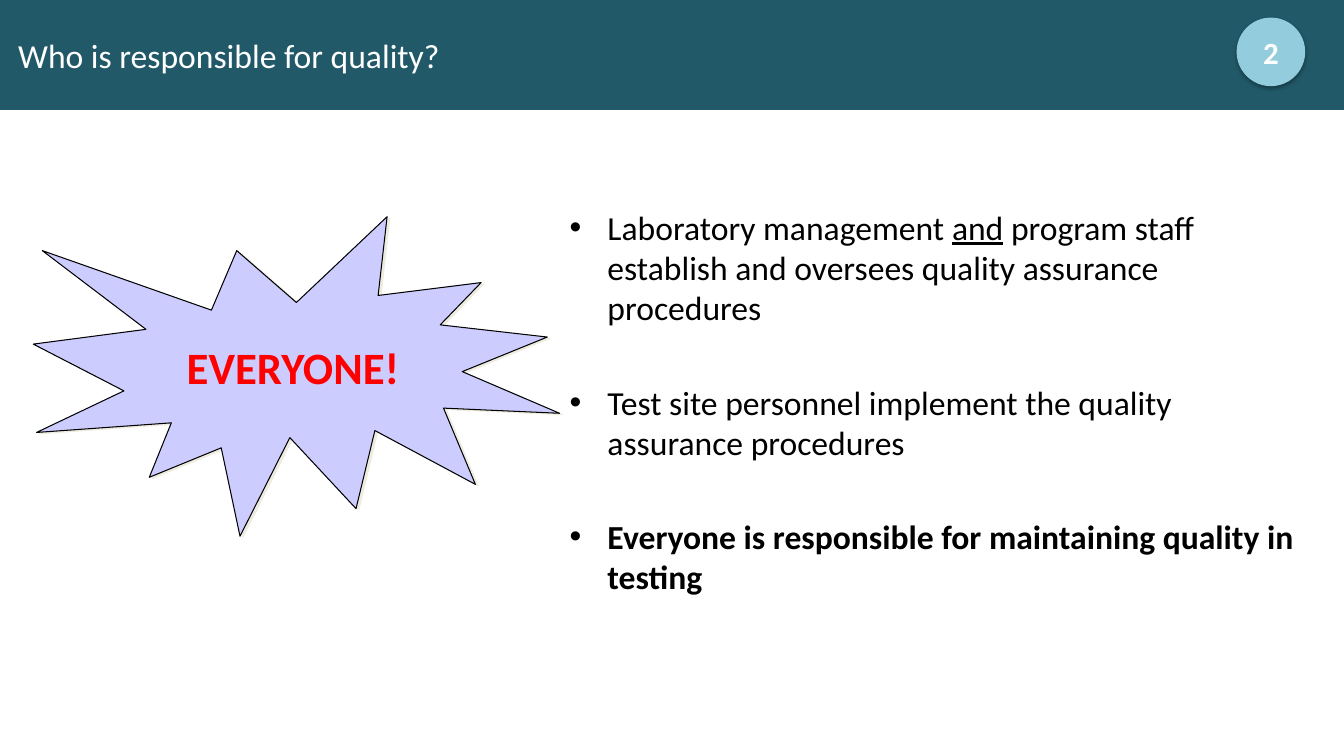
from dataclasses import dataclass

from lxml.etree import SubElement
from pptx import Presentation
from pptx.dml.color import RGBColor
from pptx.enum.shapes import MSO_SHAPE
from pptx.enum.text import MSO_ANCHOR, MSO_AUTO_SIZE, PP_ALIGN
from pptx.oxml.ns import qn
from pptx.slide import Slide
from pptx.text.text import TextFrame, _Run
from pptx.util import Inches, Pt


@dataclass(frozen=True)
class Theme:
    font: str = "Calibri"
    teal: str = "215968"
    sky: str = "93CDDD"
    lilac: str = "CCCCFF"
    cream: str = "EEECE1"
    red: str = "FF0000"
    black: str = "000000"
    white: str = "FFFFFF"
    text: int = 24
    shout: int = 32
    number: int = 22


@dataclass(frozen=True)
class Shadow:
    color: str
    alpha: int
    blur: float
    dist: float
    angle: int


@dataclass(frozen=True)
class Badge:
    kind: MSO_SHAPE
    box: tuple[float, float, float, float]
    fill: str
    line: str
    shadow: Shadow
    text: str
    size: int
    color: str
    wrap: bool


@dataclass(frozen=True)
class Span:
    text: str
    bold: bool = False
    under: bool = False


THEME = Theme()
TITLE = "Who is responsible for quality?"
POINTS = [
    [
        Span("Laboratory management "),
        Span("and", under=True),
        Span(" program staff establish and oversees quality assurance procedures"),
    ],
    [Span("Test site personnel implement the quality assurance procedures")],
    [Span("Everyone is responsible for maintaining quality in testing", bold=True)],
]
BADGES = [
    Badge(MSO_SHAPE.EXPLOSION1, (0.33, 2.15, 5.22, 3.17), THEME.lilac, THEME.black,
          Shadow(THEME.cream, 100, 0, 2.2, 27), "EVERYONE!", THEME.shout, THEME.red, False),
    Badge(MSO_SHAPE.OVAL, (12.27, 0.18, 0.67, 0.67), THEME.sky, THEME.sky,
          Shadow(THEME.black, 35, 3.1, 1.8, 90), "2", THEME.number, THEME.white, True),
]


def rgb(color: str) -> RGBColor:
    return RGBColor.from_string(color)


def place(shape, box: tuple[float, float, float, float]) -> None:
    shape.left, shape.top, shape.width, shape.height = map(Inches, box)


def style(run: _Run, size: int, color: str, bold: bool = False) -> None:
    run.font.name = THEME.font
    run.font.size = Pt(size)
    run.font.bold = bold
    run.font.color.rgb = rgb(color)


def cast(shape, shadow: Shadow) -> None:
    """Give the shape an outer shadow."""
    shape.shadow.inherit = False
    effects = shape.element.spPr.find(qn("a:effectLst"))
    outer = SubElement(
        effects, qn("a:outerShdw"), blurRad=str(Pt(shadow.blur)),
        dist=str(Pt(shadow.dist)), dir=str(shadow.angle * 60000), rotWithShape="0",
    )
    tint = SubElement(outer, qn("a:srgbClr"), val=shadow.color)
    SubElement(tint, qn("a:alpha"), val=str(shadow.alpha * 1000))


def add_title(slide: Slide) -> None:
    title = slide.shapes.title
    place(title, (0, 0, 13.33, 1.09))
    title.fill.solid()
    title.fill.fore_color.rgb = rgb(THEME.teal)
    frame = title.text_frame
    frame.text = TITLE
    frame.auto_size = MSO_AUTO_SIZE.NONE
    frame.vertical_anchor = MSO_ANCHOR.MIDDLE
    frame.margin_left = Inches(0.18)
    frame.paragraphs[0].alignment = PP_ALIGN.LEFT
    style(frame.paragraphs[0].runs[0], THEME.text, THEME.white)


def fill_points(frame: TextFrame) -> None:
    frame.auto_size = MSO_AUTO_SIZE.NONE
    frame.text = "\n".join("" for _ in POINTS)
    for index, (para, spans) in enumerate(zip(frame.paragraphs, POINTS)):
        para.space_before = Pt(38.5 if index else 0)
        for span in spans:
            run = para.add_run()
            run.text = span.text
            style(run, THEME.text, THEME.black, span.bold)
            run.font.underline = span.under


def add_badge(slide: Slide, badge: Badge) -> None:
    shape = slide.shapes.add_shape(badge.kind, *map(Inches, badge.box))
    shape.fill.solid()
    shape.fill.fore_color.rgb = rgb(badge.fill)
    shape.line.color.rgb = rgb(badge.line)
    shape.line.width = Pt(0.75)
    cast(shape, badge.shadow)
    frame = shape.text_frame
    frame.text = badge.text
    frame.word_wrap = badge.wrap
    frame.vertical_anchor = MSO_ANCHOR.MIDDLE
    frame.paragraphs[0].alignment = PP_ALIGN.CENTER
    style(frame.paragraphs[0].runs[0], badge.size, badge.color, True)


def main() -> None:
    deck = Presentation()
    deck.slide_width, deck.slide_height = Inches(13.33), Inches(7.5)
    slide = deck.slides.add_slide(deck.slide_layouts[1])
    add_title(slide)
    body = slide.placeholders[1]
    place(body, (5.55, 2, 7.44, 4.33))
    fill_points(body.text_frame)
    for badge in BADGES:
        add_badge(slide, badge)
    deck.save("out.pptx")


if __name__ == "__main__":
    main()
